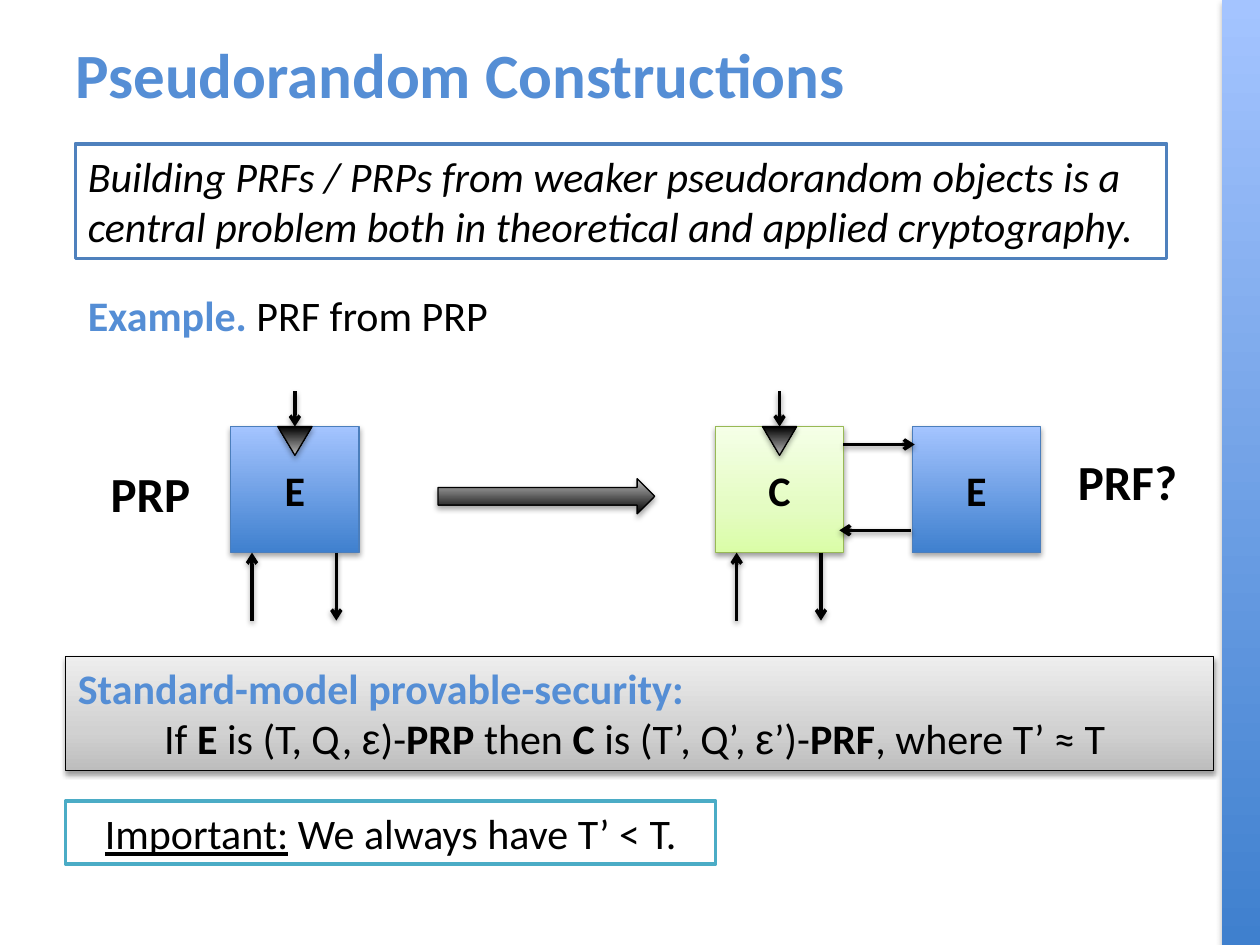
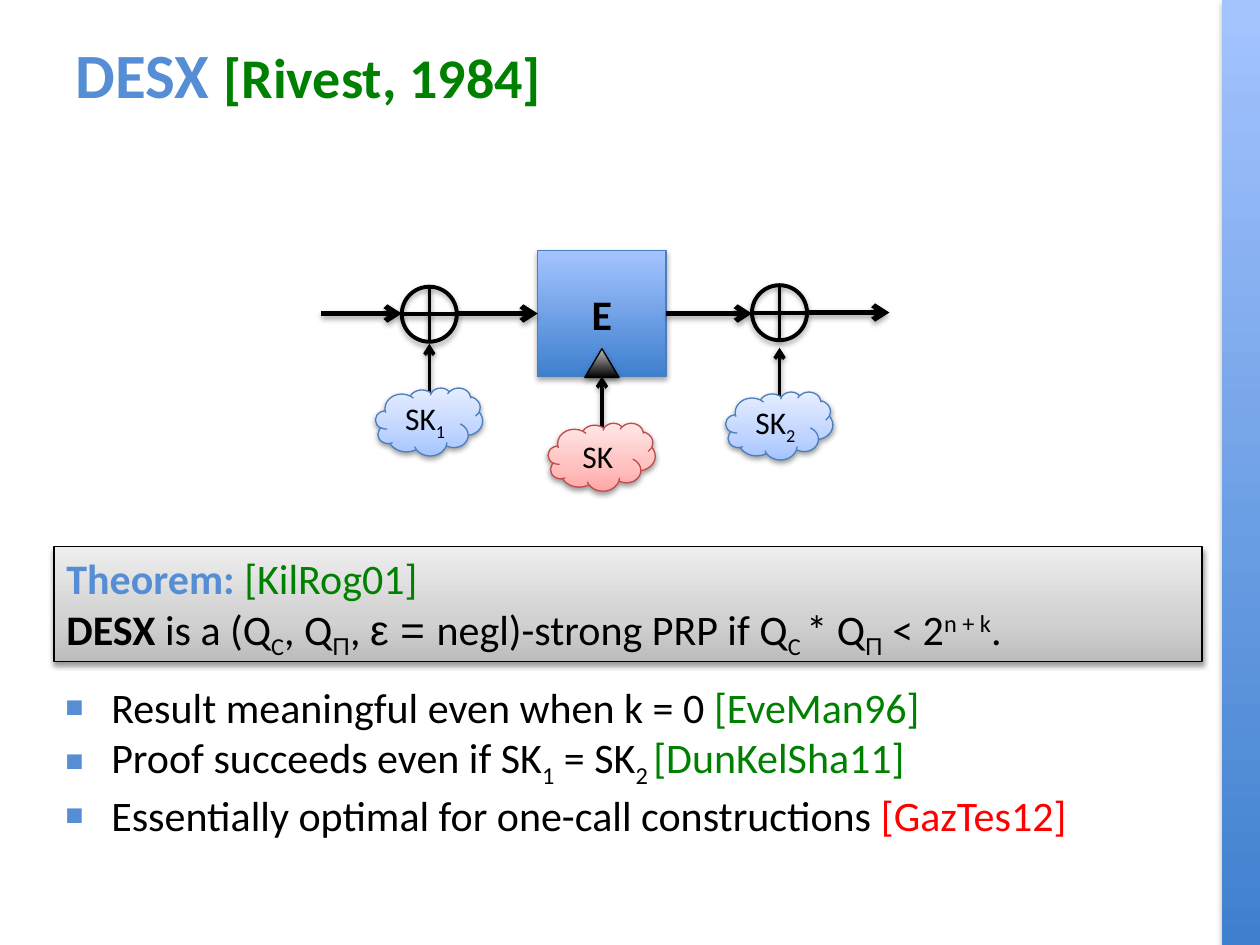
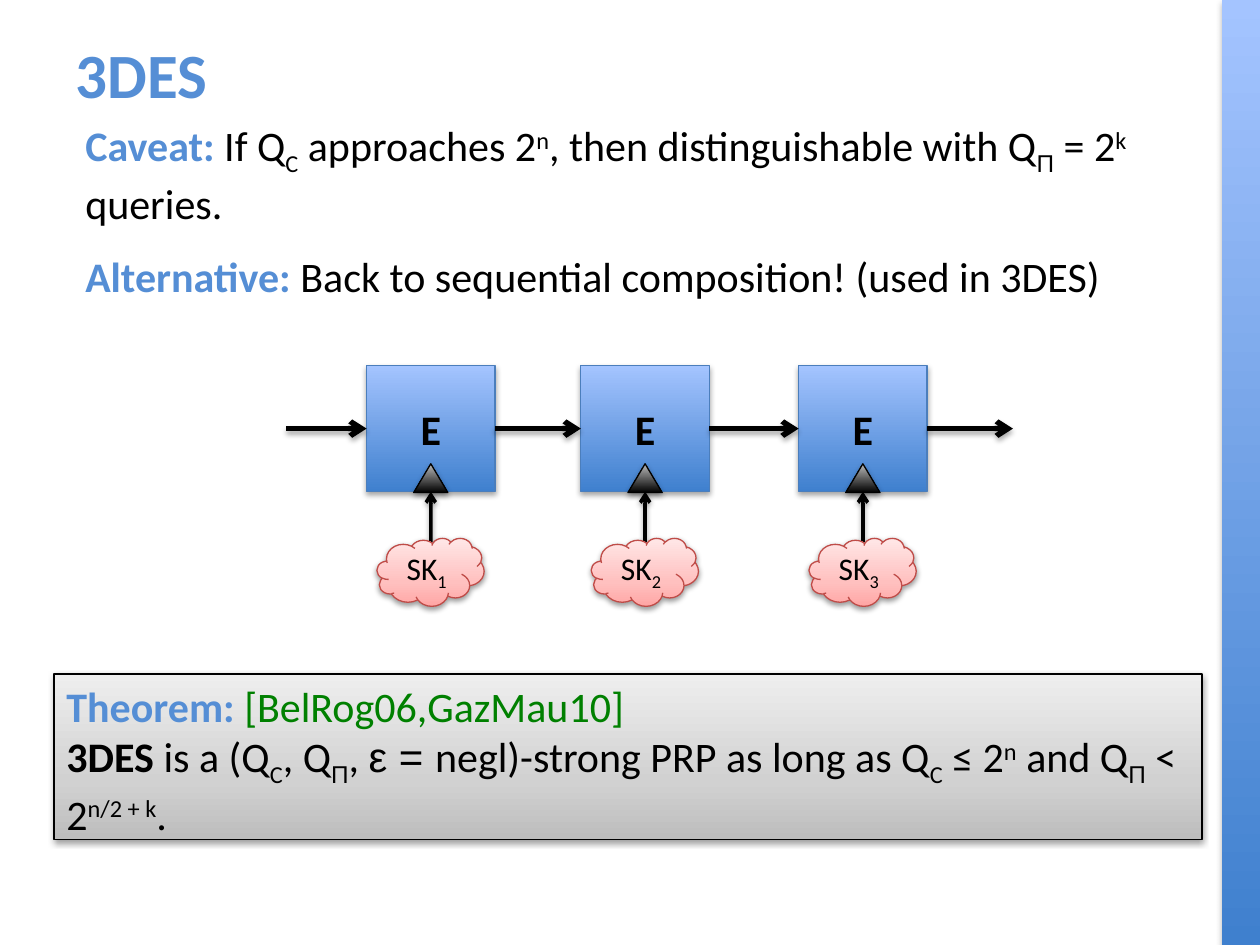
import collections

import lxml.etree
import pptx
import pptx.dml.color
import pptx.enum.shapes
import pptx.enum.text
import pptx.oxml.ns
import pptx.util

Cm, Pt = pptx.util.Cm, pptx.util.Pt
RGB = pptx.dml.color.RGBColor
SHAPE = pptx.enum.shapes.MSO_SHAPE
ALIGN = pptx.enum.text.PP_ALIGN
ANCHOR = pptx.enum.text.MSO_ANCHOR
FIT = pptx.enum.text.MSO_AUTO_SIZE
qn = pptx.oxml.ns.qn

# Colours
ACCENT = RGB(0x55, 0x8E, 0xD5)
BLACK = RGB(0, 0, 0)
WHITE = RGB(255, 255, 255)
GREEN = RGB(0, 0x80, 0)
RED = RGB(255, 0, 0)
FRAME_BLUE = RGB(0x4F, 0x81, 0xBD)
FRAME_TEAL = RGB(0x4B, 0xAC, 0xC6)
EDGE_BLUE = RGB(0x4B, 0x7E, 0xBC)
EDGE_GREEN = RGB(0x98, 0xB9, 0x55)
EDGE_RED = RGB(0xBF, 0x4C, 0x48)
DEEP_BLUE = RGB(0x3F, 0x80, 0xCE)
SKY = RGB(0xA4, 0xC4, 0xFF)
SILVER = RGB(0xBD, 0xBD, 0xBD)

# Shadows: opacity in percent, distance in points
STRONG, SOFT = (35, 1.8), (38, 1.6)

# Looks: colours from bottom to top, outline, outline width, shadow
Look = collections.namedtuple("Look", "stops line width shadow", defaults=(0.75, SOFT))
BAND = Look([DEEP_BLUE, SKY], None, 0, STRONG)
BLUE = Look([DEEP_BLUE, SKY], EDGE_BLUE, 0.75, STRONG)
DARK = Look([BLACK, SILVER], BLACK, 0.75, STRONG)
LIME = Look([RGB(0xDA, 0xFD, 0xA7), RGB(0xE4, 0xFC, 0xC2), RGB(0xF5, 0xFF, 0xE7)], EDGE_GREEN)
PALE_BLUE = Look([SKY, RGB(0xBF, 0xD4, 0xFF), RGB(0xE6, 0xEE, 0xFF)], EDGE_BLUE)
PINK = Look([RGB(0xFF, 0xA6, 0xA5), RGB(0xFF, 0xC0, 0xBF), RGB(0xFF, 0xE7, 0xE7)], EDGE_RED)
GREY = Look([SILVER, RGB(0xD1, 0xD1, 0xD1), RGB(0xEE, 0xEE, 0xEE)], BLACK)
RING = Look([], BLACK, 2.25, STRONG)
BLUE_FRAME = Look([WHITE], FRAME_BLUE, 2, None)
TEAL_FRAME = Look([WHITE], FRAME_TEAL, 2, None)

# Block size and line widths
BLOCK_W, BLOCK_H = 2.59, 2.54
THIN, THICK = 2, 3

# Runs: plain text or (text, marks); h heading, g green, r red, b bold, i italic,
# u underlined, s smaller title text, a Arial, _ subscript, ^ superscript
Q_C = ["Q", ("C", "_")]
Q_PI = ["Q", ("Π", "a_")]
STRONG_PRP = [" is a (", *Q_C, ", ", *Q_PI, ", ", ("ε = ", "a"), "negl)-strong PRP "]


class Deck:
    font = "Calibri"

    def __init__(self):
        self.prs = pptx.Presentation()
        self.prs.slide_width, self.prs.slide_height = Cm(25.4), Cm(19.05)
        self.s = None

    def slide(self, title, layout=5):
        self.s = self.prs.slides.add_slide(self.prs.slide_layouts[layout])
        sp = self.place(self.s.shapes.title, 1.27, 0.43, 22.96, 2.11)
        self.set_text(sp.text_frame, [title], 36, anchor=ANCHOR.MIDDLE)

    def band(self):
        """Side band, moved to the master so that every slide shows it."""
        sp = self.shape(SHAPE.RECTANGLE, 24.64, 0, 0.76, 19.05, BAND)
        sp.element.xpath(".//p:cNvPr")[0].set("id", "99")
        self.prs.slide_master.shapes.element.insert(2, sp.element)

    # Text
    def place(self, sp, x, y, w, h):
        sp.left, sp.top, sp.width, sp.height = Cm(x), Cm(y), Cm(w), Cm(h)
        return sp

    def set_text(self, tf, paragraphs, size=24, align=ALIGN.LEFT, anchor=ANCHOR.TOP,
                 wrap=True, fit=FIT.NONE):
        tf.word_wrap, tf.auto_size, tf.vertical_anchor = wrap, fit, anchor
        for i, runs in enumerate(paragraphs):
            p = tf.add_paragraph() if i else tf.paragraphs[0]
            p.alignment = align
            p.space_before = Pt(0)
            for run in runs:
                text, marks = (run, "") if isinstance(run, str) else run
                r = p.add_run()
                r.text = text
                self.mark(r, marks, size)

    def mark(self, r, marks, size):
        f = r.font
        f.name = "Arial" if "a" in marks else self.font
        f.size = Pt(32 if "s" in marks else size)
        f.bold = "b" in marks or "h" in marks
        f.italic = "i" in marks
        f.underline = "u" in marks
        colours = {"h": ACCENT, "g": GREEN, "r": RED}
        f.color.rgb = next((c for m, c in colours.items() if m in marks), BLACK)
        for m, shift in (("_", "-25000"), ("^", "30000")):
            if m in marks:
                r._r.get_or_add_rPr().set("baseline", shift)

    def text(self, x, y, w, h, runs, size=24, wrap=True):
        sp = self.s.shapes.add_textbox(Cm(x), Cm(y), Cm(w), Cm(h))
        self.set_text(sp.text_frame, [runs], size, wrap=wrap, fit=FIT.SHAPE_TO_FIT_TEXT)

    def panel(self, x, y, w, h, look, *paragraphs, align=ALIGN.LEFT):
        sp = self.shape(SHAPE.RECTANGLE, x, y, w, h, look)
        self.set_text(sp.text_frame, paragraphs, align=align, fit=FIT.SHAPE_TO_FIT_TEXT)
        return sp

    def bullets(self, x, y, w, h, *items):
        sp = self.place(self.s.placeholders[1], x, y, w, h)
        self.set_text(sp.text_frame, items)
        for p in sp.text_frame.paragraphs:
            pPr = p._p.get_or_add_pPr()
            pPr.set("marL", str(Cm(0.95)))
            pPr.set("indent", str(Cm(-0.95)))
            clr = lxml.etree.SubElement(pPr, qn("a:buClr"))
            lxml.etree.SubElement(clr, qn("a:srgbClr"), val=str(ACCENT))
            lxml.etree.SubElement(pPr, qn("a:buSzPct"), val="140000")
            lxml.etree.SubElement(pPr, qn("a:buFont"), typeface="Arial")
            lxml.etree.SubElement(pPr, qn("a:buChar"), char="▪")

    # Shapes and lines
    def shadow(self, effects, opacity, distance):
        sh = lxml.etree.SubElement(effects, qn("a:outerShdw"), blurRad="40000",
                                   dist=str(Pt(distance)), dir="5400000", rotWithShape="0")
        clr = lxml.etree.SubElement(sh, qn("a:srgbClr"), val=str(BLACK))
        lxml.etree.SubElement(clr, qn("a:alpha"), val=str(opacity * 1000))

    def shape(self, kind, x, y, w, h, look):
        sp = self.s.shapes.add_shape(kind, Cm(x), Cm(y), Cm(w), Cm(h))
        if not look.stops:
            sp.fill.background()
        elif len(look.stops) == 1:
            sp.fill.solid()
            sp.fill.fore_color.rgb = look.stops[0]
        else:
            sp.fill.gradient()
            sp.fill.gradient_angle = 90
            stops = sp.element.xpath(".//a:gsLst")[0]
            stops.clear()
            places = (0, 100) if len(look.stops) == 2 else (0, 35, 100)
            for place, colour in zip(places, look.stops):
                gs = lxml.etree.SubElement(stops, qn("a:gs"), pos=str(place * 1000))
                lxml.etree.SubElement(gs, qn("a:srgbClr"), val=str(colour))
        if look.line is None:
            sp.line.fill.background()
        else:
            sp.line.color.rgb = look.line
            sp.line.width = Pt(look.width)
        sp.shadow.inherit = False
        if look.shadow:
            self.shadow(sp.element.spPr.find(qn("a:effectLst")), *look.shadow)
        return sp

    def line(self, start, end, width=THIN, arrow=True):
        """Each end is a point (x, y) or a joint (shape, side)."""
        joints = [not isinstance(e[0], (int, float)) for e in (start, end)]
        points = [(0, 0) if j else e for j, e in zip(joints, (start, end))]
        c = self.s.shapes.add_connector(pptx.enum.shapes.MSO_CONNECTOR.STRAIGHT,
                                        *(Cm(v) for point in points for v in point))
        if joints[0]:
            c.begin_connect(*start)
        if joints[1]:
            c.end_connect(*end)
        c.line.color.rgb = BLACK
        c.line.width = Pt(width)
        spPr = c.element.spPr
        if arrow:
            lxml.etree.SubElement(spPr.find(qn("a:ln")), qn("a:tailEnd"), type="arrow")
        effects = lxml.etree.SubElement(spPr, qn("a:effectLst"))
        self.shadow(effects, *(STRONG if width == THICK else SOFT))

    # Diagram parts
    def block(self, x, y, letter, look=BLUE):
        sp = self.shape(SHAPE.RECTANGLE, x, y, BLOCK_W, BLOCK_H, look)
        self.set_text(sp.text_frame, [[(letter, "b")]], align=ALIGN.CENTER,
                      anchor=ANCHOR.MIDDLE)
        return sp

    def key_mark(self, x, y):
        return self.shape(SHAPE.ISOSCELES_TRIANGLE, x + 0.95, y, 0.69, 0.58, DARK)

    def oracle(self, x, y, letter, look):
        """Block with its key on top, an input and an output below."""
        sp = self.block(x, y, letter, look)
        self.key_mark(x, y).rotation = 180
        self.line((x + BLOCK_W / 2, y - 0.71), (sp, 0))
        low, high = y + 3.91, y + BLOCK_H
        self.line((x + 0.43, low), (x + 0.43, high))
        self.line((x + 2.13, high), (x + 2.13, low))

    def cloud(self, x, y, look, *index):
        sp = self.shape(SHAPE.CLOUD, x, y, 2.16, 1.37, look)
        self.set_text(sp.text_frame, [["SK", *((i, "_") for i in index)]], 18,
                      ALIGN.CENTER, ANCHOR.MIDDLE, wrap=False)

    def cipher(self, x, y, *index):
        """Block E with its secret key below."""
        sp = self.block(x, y, "E")
        self.key_mark(x, y + BLOCK_H - 0.56)
        self.line((x + BLOCK_W / 2, y + 3.56), (sp, 2))
        self.cloud(x + 0.21, y + 3.48, PINK, *index)
        return sp

    def xor(self, x, y, cloud_y, index):
        """XOR sign with its whitening key below."""
        d = 1.11
        mid = x + d / 2
        self.shape(SHAPE.OVAL, x, y, d, d, RING)
        self.line((mid, y), (mid, y + d), arrow=False)
        self.line((x, y + d / 2), (x + d, y + d / 2), arrow=False)
        self.line((mid, cloud_y + 0.09), (mid, cloud_y - 0.89))
        self.cloud(x - 0.53, cloud_y, PALE_BLUE, index)


def constructions(d):
    d.slide([("Pseudorandom Constructions", "h")])
    d.band()
    d.panel(1.52, 2.9, 22, 2.31, BLUE_FRAME,
            [("Building PRFs / PRPs from weaker pseudorandom objects is a central problem "
              "both in theoretical and applied cryptography.", "i")])
    d.text(1.52, 5.72, 22, 1.27, [("Example.", "h"), " PRF from PRP"])
    # PRP to PRF
    top = 8.6
    d.text(1.98, 9.22, 2.13, 1.45, [("PRP", "b")], 28, wrap=False)
    d.oracle(4.65, top, "E", BLUE)
    d.shape(SHAPE.RIGHT_ARROW, 8.83, 9.65, 4.37, 0.71, DARK)
    d.block(18.39, top, "E")
    d.oracle(14.42, top, "C", LIME)
    d.line((17, 8.96), (18.44, 8.96))
    d.line((18.36, 10.69), (16.92, 10.69))
    d.text(21.48, 8.97, 2.51, 1.45, [("PRF?", "b")], 28, wrap=False)
    # Statement
    sp = d.panel(1.32, 13.23, 23.14, 2.31, GREY,
                 [("Standard-model provable-security:", "h")],
                 ["If ", ("E ", "b"), "is (T, Q, ", ("ε", "a"), ")-", ("PRP ", "b"), "then ",
                  ("C", "b"), " is (T’, Q’, ", ("ε", "a"), "’)-", ("PRF", "b"),
                  ", where T’ ≈ T "])
    sp.text_frame.paragraphs[1].alignment = ALIGN.CENTER
    d.panel(1.32, 16.15, 13.11, 1.27, TEAL_FRAME,
            [("Important:", "u"), " We always have T’ < T."], align=ALIGN.CENTER)


def desx(d):
    d.slide([("DESX ", "h"), ("[Rivest, 1984]", "gbs")], layout=1)
    # Whitened cipher
    e = d.cipher(10.84, 5.05)
    d.xor(8.1, 5.78, 7.82, "1")
    d.xor(15.16, 5.75, 7.9, "2")
    d.line((6.48, 6.32), (8.1, 6.32), THICK)
    d.line((9.22, 6.32), (e, 1), THICK)
    d.line((e, 3), (15.16, 6.32), THICK)
    d.line((16.31, 6.3), (17.93, 6.3), THICK)
    # Theorem and remarks
    d.panel(1.09, 11.02, 23.14, 2.31, GREY,
            [("Theorem: ", "h"), ("[KilRog01]", "g")],
            [("DESX", "b"), *STRONG_PRP, "if Q", ("C ", "_"), "* ", *Q_PI, " < 2",
             ("n + k", "^"), "."])
    d.bullets(1.04, 13.61, 23.19, 3.33,
              ["Result meaningful even when k = 0 ", ("[EveMan96]", "g")],
              ["Proof succeeds even if SK", ("1", "_"), " = SK", ("2 ", "_"),
               ("[DunKelSha11]", "g")],
              ["Essentially optimal for one-call constructions ", ("[GazTes12]", "r")])


def triple_des(d):
    d.slide([("3DES", "h")])
    d.text(1.47, 2.29, 22.66, 2.31,
           [("Caveat:", "h"), " If ", *Q_C, " approaches 2", ("n", "^"),
            ", then distinguishable with ", *Q_PI, " = 2", ("k", "^"), " queries."])
    d.text(1.47, 4.93, 22.66, 1.27,
           [("Alternative:", "h"), " Back to sequential composition! (used in 3DES)"])
    # Cascade
    top = 7.37
    mid = top + BLOCK_H / 2
    ciphers = [d.cipher(x, top, str(i)) for i, x in enumerate((7.39, 11.71, 16.1), 1)]
    stops = [(5.77, mid), *ciphers, (20.42, mid)]
    for a, b in zip(stops, stops[1:]):
        d.line((a, 3) if a in ciphers else a, (b, 1) if b in ciphers else b, THICK)
    # Theorem
    d.panel(1.09, 13.59, 23.14, 3.33, GREY,
            [("Theorem: ", "h"), ("[BelRog06,GazMau10]", "g")],
            [("3DES", "b"), *STRONG_PRP, "as long as ", *Q_C, " ≤ 2", ("n", "^"), " and ",
             *Q_PI, " < 2", ("n/2 + k", "^"), "."])


def main():
    d = Deck()
    constructions(d)
    desx(d)
    triple_des(d)
    d.prs.save("out.pptx")


if __name__ == "__main__":
    main()
